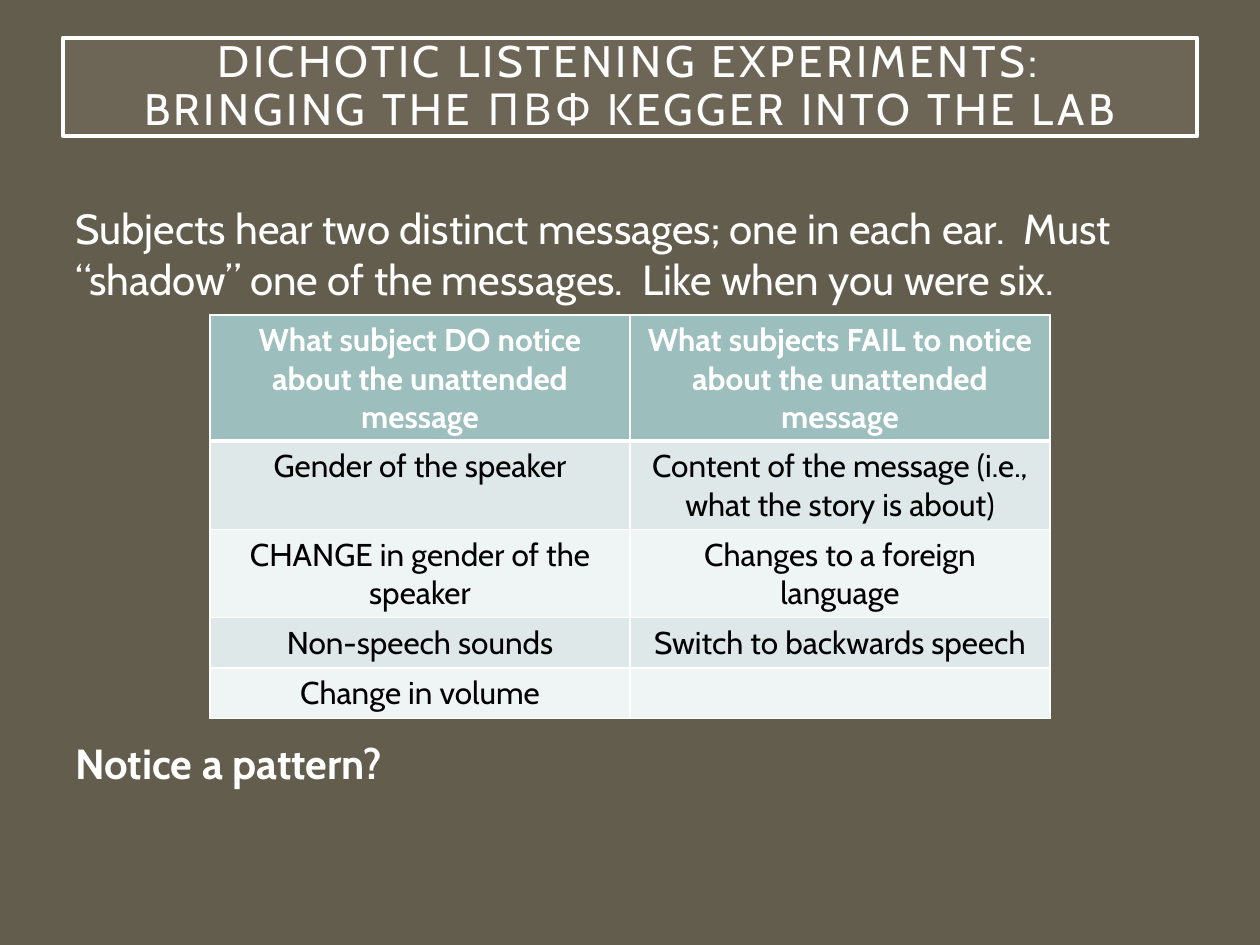
from lxml.etree import SubElement
from pptx import Presentation
from pptx.dml.color import RGBColor
from pptx.enum.text import MSO_ANCHOR, MSO_AUTO_SIZE, PP_ALIGN
from pptx.oxml import parse_xml
from pptx.oxml.ns import nsdecls, qn
from pptx.util import Inches, Pt

BACKGROUND = RGBColor(0x63, 0x5D, 0x4D)
TITLE_FILL = RGBColor(0xA7, 0xA0, 0x8E)
WHITE = RGBColor(0xFF, 0xFF, 0xFF)
BLACK = RGBColor(0x00, 0x00, 0x00)
HEADER_FILL = RGBColor(0x9C, 0xBE, 0xBD)
BAND_FILLS = [RGBColor(0xEF, 0xF4, 0xF4), RGBColor(0xDE, 0xE8, 0xE8)]
FONT = "Cabin"

TITLE = "DICHOTIC LISTENING EXPERIMENTS:\vBRINGING THE ΠΒΦ KEGGER INTO THE LAB"
INTRODUCTION = (
    "Subjects hear two distinct messages; one in each ear.  Must “shadow” "
    "one of the messages.  Like when you were six."
)
QUESTION = "Notice a pattern?"
ROWS = [
    ("What subject DO notice about the unattended message",
     "What subjects FAIL to notice about the unattended message"),
    ("Gender of the speaker", "Content of the message (i.e., what the story is about)"),
    ("CHANGE in gender of the speaker", "Changes to a foreign language"),
    ("Non-speech sounds", "Switch to backwards speech"),
    ("Change in volume", ""),
]
ROW_HEIGHTS = [1, 0.7, 0.7, 0.4, 0.4]


def format_runs(paragraph, size, color, bold=False):
    for run in paragraph.runs:
        run.font.name = FONT
        run.font.size = Pt(size)
        run.font.bold = bold
        run.font.color.rgb = color


def add_border(cell, side, width):
    border = parse_xml(
        f'<a:{side} {nsdecls("a")} w="{Pt(width)}"><a:solidFill>'
        f'<a:srgbClr val="{WHITE}"/></a:solidFill></a:{side}>'
    )
    cell._tc.get_or_add_tcPr().append(border)


presentation = Presentation()
presentation.slide_width = Inches(10)
presentation.slide_height = Inches(7.5)
width, height = presentation.slide_width, presentation.slide_height
margin = int(width * 0.05)
content_width = width - 2 * margin

slide = presentation.slides.add_slide(presentation.slide_layouts[5])
slide.background.fill.solid()
slide.background.fill.fore_color.rgb = BACKGROUND

title = slide.shapes.title
title.left, title.top = margin, int(height * 0.04)
title.width, title.height = content_width, Inches(0.78)
title.fill.solid()
title.fill.fore_color.rgb = TITLE_FILL
title_color = title.fill._xPr.find(qn("a:solidFill")).find(qn("a:srgbClr"))
SubElement(title_color, qn("a:alpha"), val="15000")
title.line.color.rgb = WHITE
title.line.width = Pt(2.5)
frame = title.text_frame
frame.text = TITLE
frame.word_wrap = True
frame.auto_size = MSO_AUTO_SIZE.NONE
frame.vertical_anchor = MSO_ANCHOR.MIDDLE
frame.margin_left = frame.margin_right = Inches(0.2)
frame.margin_top = frame.margin_bottom = Inches(0.2)
paragraph = frame.paragraphs[0]
paragraph.alignment = PP_ALIGN.CENTER
paragraph.line_spacing = 0.9
format_runs(paragraph, 25.2, WHITE)
for run in paragraph.runs:
    run.font._element.set("spc", "200")

body = slide.shapes.add_textbox(margin, title.top + title.height, content_width, Inches(6.2))
frame = body.text_frame
frame.word_wrap = True
frame.margin_top = Inches(0.53)
frame.text = INTRODUCTION
format_runs(frame.paragraphs[0], 24, WHITE)
question = frame.add_paragraph()
question.text = QUESTION
question.space_before = Pt(248)
format_runs(question, 24, WHITE, bold=True)

table_width = int(width * 2 / 3)
table = slide.shapes.add_table(
    len(ROWS), 2, (width - table_width) // 2, height // 3,
    table_width, Inches(sum(ROW_HEIGHTS)),
).table
for row_index, texts in enumerate(ROWS):
    is_header = row_index == 0
    table.rows[row_index].height = Inches(ROW_HEIGHTS[row_index])
    for column_index, text in enumerate(texts):
        cell = table.cell(row_index, column_index)
        cell.text = text
        paragraph = cell.text_frame.paragraphs[0]
        paragraph.alignment = PP_ALIGN.CENTER
        paragraph.font.size = Pt(18)
        format_runs(paragraph, 18, WHITE if is_header else BLACK, is_header)
        for side in ("lnL", "lnR", "lnT", "lnB"):
            meets_header_rule = (row_index, side) in [(0, "lnB"), (1, "lnT")]
            add_border(cell, side, 3 if meets_header_rule else 1)
        cell.fill.solid()
        cell.fill.fore_color.rgb = HEADER_FILL if is_header else BAND_FILLS[row_index % 2]

presentation.save("out.pptx")
